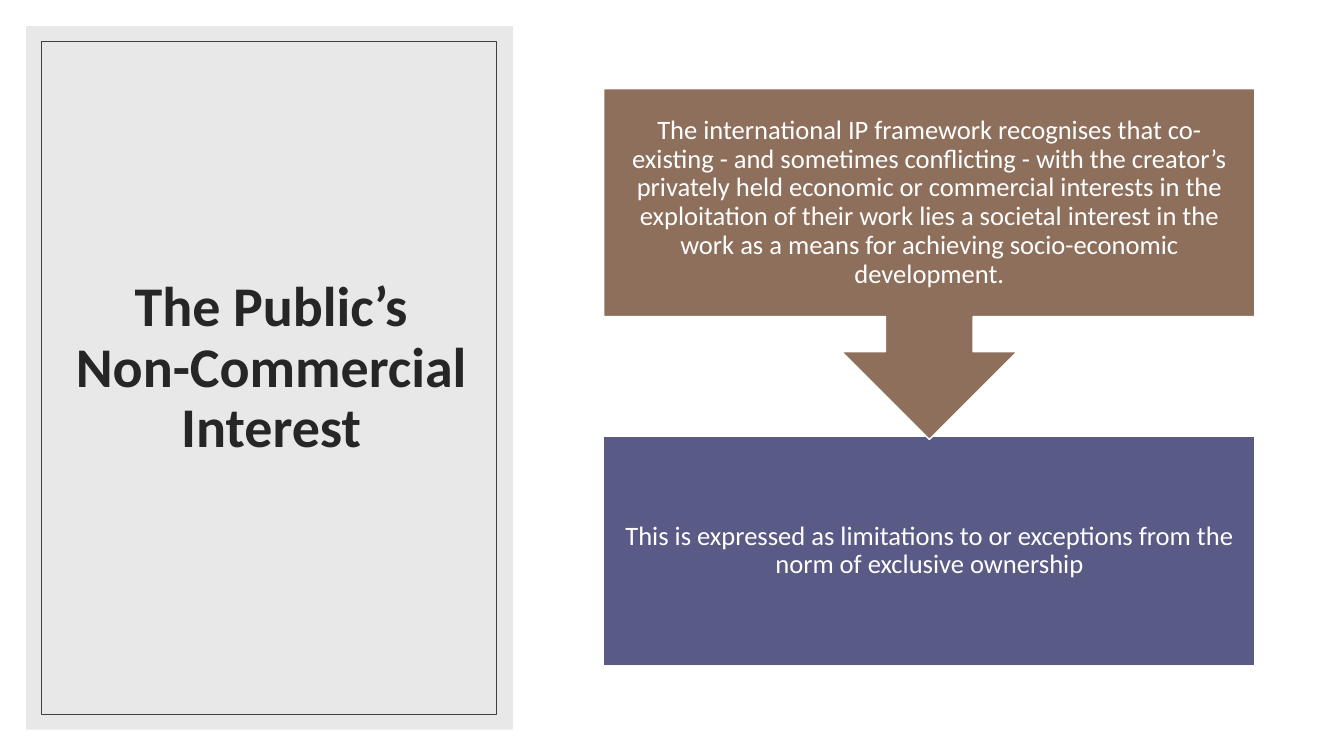
from lxml import etree
from pptx import Presentation
from pptx.dml.color import RGBColor
from pptx.enum import shapes, text
from pptx.oxml import ns
from pptx.util import Pt

COLORS = {
    "white": "FFFFFF",
    "panel": "D9D9D9",
    "frame": "404040",
    "title": "262626",
    "brown": "8D6F5B",
    "violet": "595A85",
}
SHAPE = shapes.MSO_SHAPE


def add_box(kind, place, fill=None, line=None, width=1):
    box = page.shapes.add_shape(kind, *map(Pt, place))
    box.shadow.inherit = False
    for target, color in ((box.fill, fill), (box.line.fill, line)):
        if color:
            target.solid()
            target.fore_color.rgb = RGBColor.from_string(COLORS[color])
        else:
            target.background()
    if line:
        box.line.width = Pt(width)
    return box


def write(box, words, color, inset, font):
    frame = box.text_frame
    frame_format = {
        "word_wrap": True,
        "vertical_anchor": text.MSO_ANCHOR.MIDDLE,
        "margin_left": Pt(inset),
        "margin_right": Pt(inset),
        "margin_top": Pt(inset),
        "margin_bottom": Pt(inset),
    }
    for name, value in frame_format.items():
        setattr(frame, name, value)
    para = frame.paragraphs[0]
    para.alignment = text.PP_ALIGN.CENTER
    para.line_spacing = 0.9
    span = para.add_run()
    span.text = words
    for name, value in font.items():
        setattr(span.font, name, value)
    span.font.color.rgb = RGBColor.from_string(COLORS[color])


deck = Presentation()
deck.slide_width, deck.slide_height = Pt(960), Pt(540)
page = deck.slides.add_slide(deck.slide_layouts[6])

# Title panel: translucent grey with a thin inner frame
panel = add_box(SHAPE.RECTANGLE, (18.72, 18.72, 347.76, 502.56), fill="panel")
panel_color = panel.fill._xPr.find(".//" + ns.qn("a:srgbClr"))
etree.SubElement(panel_color, ns.qn("a:alpha"), val="60000")

title = page.shapes.add_textbox(*map(Pt, (45.36, 43.92, 296.64, 439.2)))
write(title, "The Public’s Non-Commercial Interest", "title", 7.2,
      {"name": "Calibri", "size": Pt(40), "bold": True})
add_box(SHAPE.RECTANGLE, (29.52, 29.52, 324.72, 480.96), line="frame", width=0.5)

# Two steps, the arrow of the upper one overlapping the lower one
LEFT, WIDTH = 431.28, 465.12
STEPS = [
    (SHAPE.RECTANGLE, 311.76, 163.44, "violet",
     "This is expressed as limitations to or exceptions from the norm of "
     "exclusive ownership"),
    (SHAPE.DOWN_ARROW_CALLOUT, 63.36, 250.56, "brown",
     "The international IP framework recognises that co-existing - and "
     "sometimes conflicting - with the creator’s privately held economic or "
     "commercial interests in the exploitation of their work lies a societal "
     "interest in the work as a means for achieving socio-economic "
     "development."),
]
for kind, top, height, color, words in STEPS:
    step = add_box(kind, (LEFT, top, WIDTH, height), fill=color, line="white")
    write(step, words, "white", 10.8, {"name": "Calibri", "size": Pt(19)})

deck.save("out.pptx")
